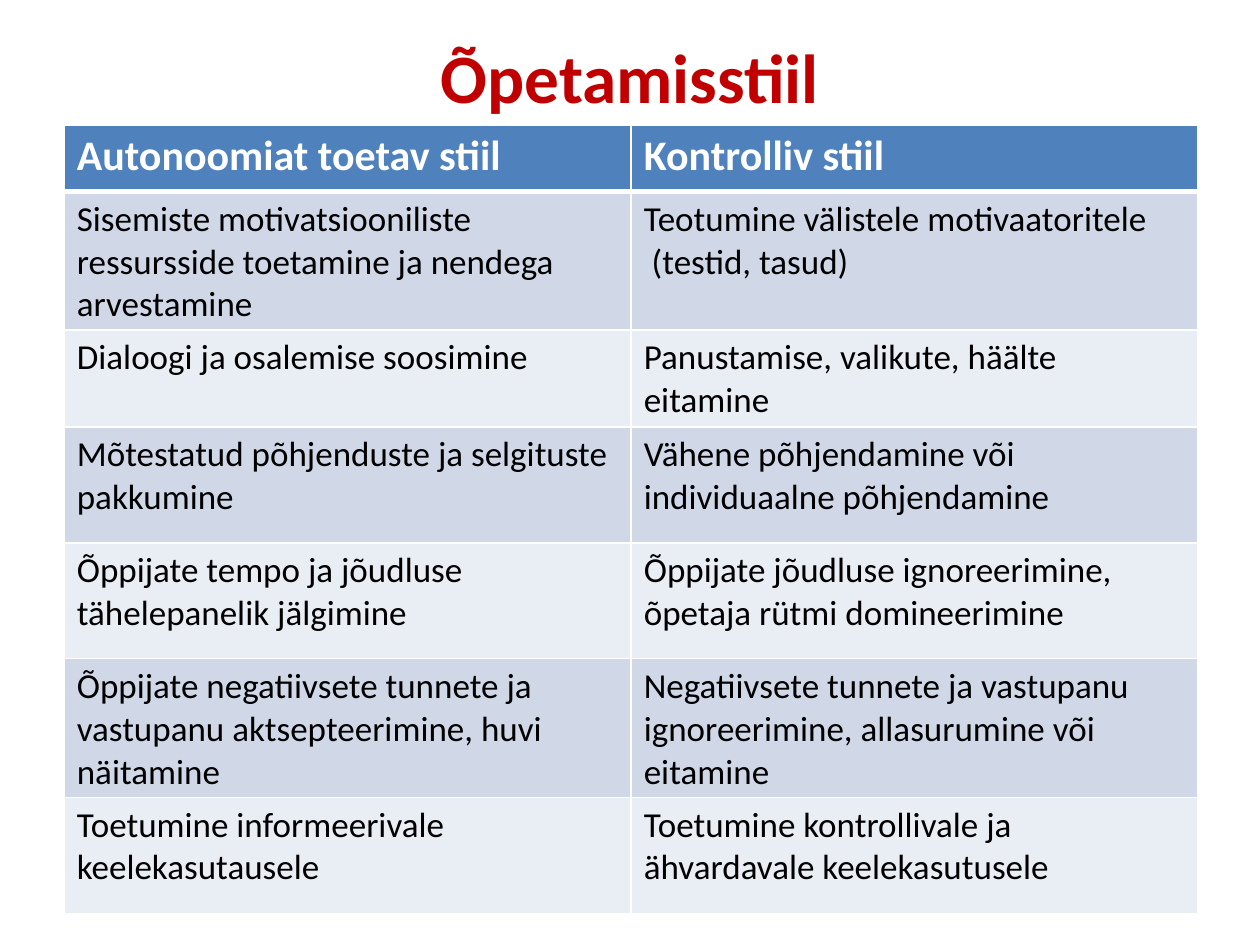
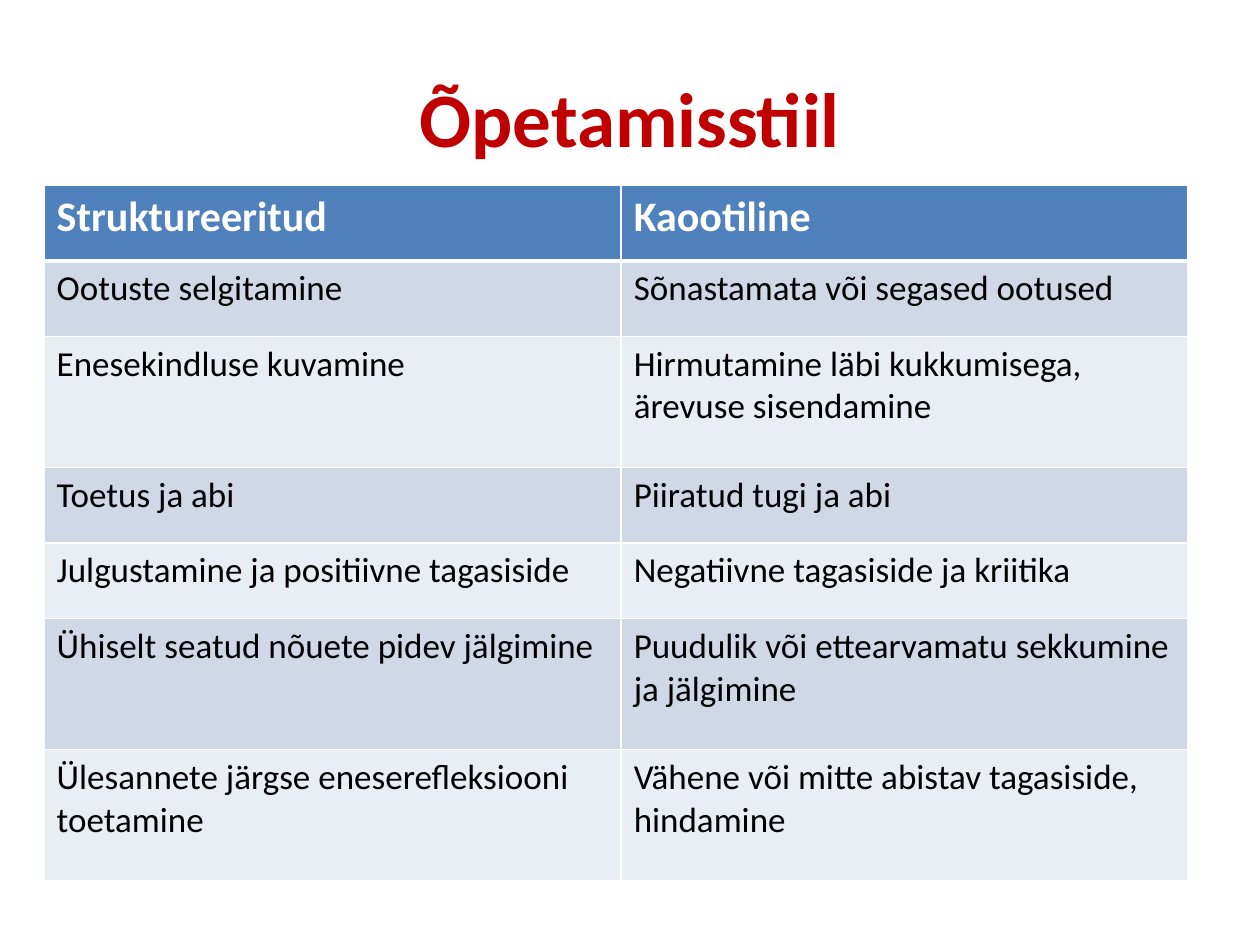
from lxml import etree
from pptx import Presentation
from pptx import util as u
from pptx.dml.color import RGBColor
from pptx.enum import text
from pptx.oxml import ns

FONT = "Calibri"
TITLE_RED, HEADER_BLUE = "C00000", "4F81BD"
BANDS = ("D0D8E8", "E9EDF4")
WHITE, BLACK = "FFFFFF", "000000"
THIN, THICK = 1, 3

AUTONOMY_ROWS = [
    ("Autonoomiat toetav stiil", "Kontrolliv stiil"),
    ("Sisemiste motivatsiooniliste ressursside toetamine ja nendega arvestamine",
     "Teotumine välistele motivaatoritele\n (testid, tasud)"),
    ("Dialoogi ja osalemise soosimine", "Panustamise, valikute, häälte eitamine"),
    ("Mõtestatud põhjenduste ja selgituste pakkumine",
     "Vähene põhjendamine või individuaalne põhjendamine"),
    ("Õppijate tempo ja jõudluse tähelepanelik jälgimine",
     "Õppijate jõudluse ignoreerimine, õpetaja rütmi domineerimine"),
    ("Õppijate negatiivsete tunnete ja vastupanu aktsepteerimine, huvi näitamine",
     "Negatiivsete tunnete ja vastupanu ignoreerimine, allasurumine või eitamine"),
    ("Toetumine informeerivale keelekasutausele",
     "Toetumine kontrollivale ja ähvardavale keelekasutusele"),
]
STRUCTURE_ROWS = [
    ("Struktureeritud", "Kaootiline"),
    ("Ootuste selgitamine", "Sõnastamata või segased ootused"),
    ("Enesekindluse kuvamine", "Hirmutamine läbi kukkumisega, ärevuse sisendamine"),
    ("Toetus ja abi", "Piiratud tugi ja abi"),
    ("Julgustamine ja positiivne tagasiside", "Negatiivne tagasiside ja kriitika"),
    ("Ühiselt seatud nõuete pidev jälgimine",
     "Puudulik või ettearvamatu sekkumine ja jälgimine"),
    ("Ülesannete järgse eneserefleksiooni toetamine",
     "Vähene või mitte abistav tagasiside, hindamine"),
]


def colour(code):
    """Turn a hex string into a colour."""
    return RGBColor.from_string(code)


def write(frame, words, size, ink, bold=False, align=None):
    """Fill a text frame, one paragraph for each line of words."""
    for index, line in enumerate(words.split("\n")):
        para = frame.add_paragraph() if index else frame.paragraphs[0]
        para.alignment = align
        span = para.add_run()
        span.text = line
        span.font.name = FONT
        span.font.size = u.Pt(size)
        span.font.bold = bold
        span.font.color.rgb = colour(ink)


def add_borders(cell, top, bottom):
    """Draw white borders round a cell, with widths in points."""
    properties = cell._tc.get_or_add_tcPr()
    for side, width in zip("LRTB", (THIN, THIN, top, bottom)):
        line = etree.SubElement(properties, ns.qn(f"a:ln{side}"), w=str(u.Pt(width)))
        fill = etree.SubElement(line, ns.qn("a:solidFill"))
        etree.SubElement(fill, ns.qn("a:srgbClr"), val=WHITE)


def add_title(page, words, height, size):
    """Add the centred red title at the top of a page."""
    box = page.shapes.add_textbox(*map(u.Inches, (0.5, 0.3, 9, height)))
    box.text_frame.word_wrap = True
    box.text_frame.vertical_anchor = text.MSO_ANCHOR.MIDDLE
    write(box.text_frame, words, size, TITLE_RED, bold=True, align=text.PP_ALIGN.CENTER)


def add_comparison(page, left, top, widths, heights, rows):
    """Add a banded table that sets two teaching styles side by side."""
    box = (left, top, sum(widths), sum(heights))
    table = page.shapes.add_table(len(rows), len(widths), *map(u.Inches, box)).table
    for column, width in zip(table.columns, widths):
        column.width = u.Inches(width)
    for row, height in zip(table.rows, heights):
        row.height = u.Inches(height)
    for index, entries in enumerate(rows):
        header = index == 0
        for column, words in enumerate(entries):
            cell = table.cell(index, column)
            add_borders(cell, THICK if index == 1 else THIN, THICK if header else THIN)
            cell.fill.solid()
            cell.fill.fore_color.rgb = colour(HEADER_BLUE if header else BANDS[(index - 1) % 2])
            write(cell.text_frame, words, 24 if header else 20,
                  WHITE if header else BLACK, bold=header)


def add_page(deck):
    """Add a blank white page."""
    page = deck.slides.add_slide(deck.slide_layouts[6])
    page.background.fill.solid()
    page.background.fill.fore_color.rgb = colour(WHITE)
    return page


def main():
    """Build the deck and save it."""
    deck = Presentation()
    deck.slide_width, deck.slide_height = u.Inches(10), u.Inches(7.5)

    page = add_page(deck)
    add_title(page, "Õpetamisstiil", 0.61, 39.6)
    add_comparison(page, 0.51, 0.99, (4.5, 4.5),
                   (0.53, 0.92, 0.53, 0.92, 0.92, 1, 0.92), AUTONOMY_ROWS)

    page = add_page(deck)
    add_title(page, "Õpetamisstiil", 1.25, 44)
    add_comparison(page, 0.35, 1.47, (4.58, 4.5),
                   (0.6, 0.6, 1.04, 0.6, 0.6, 1.04, 1.04), STRUCTURE_ROWS)

    deck.save("out.pptx")


if __name__ == "__main__":
    main()
